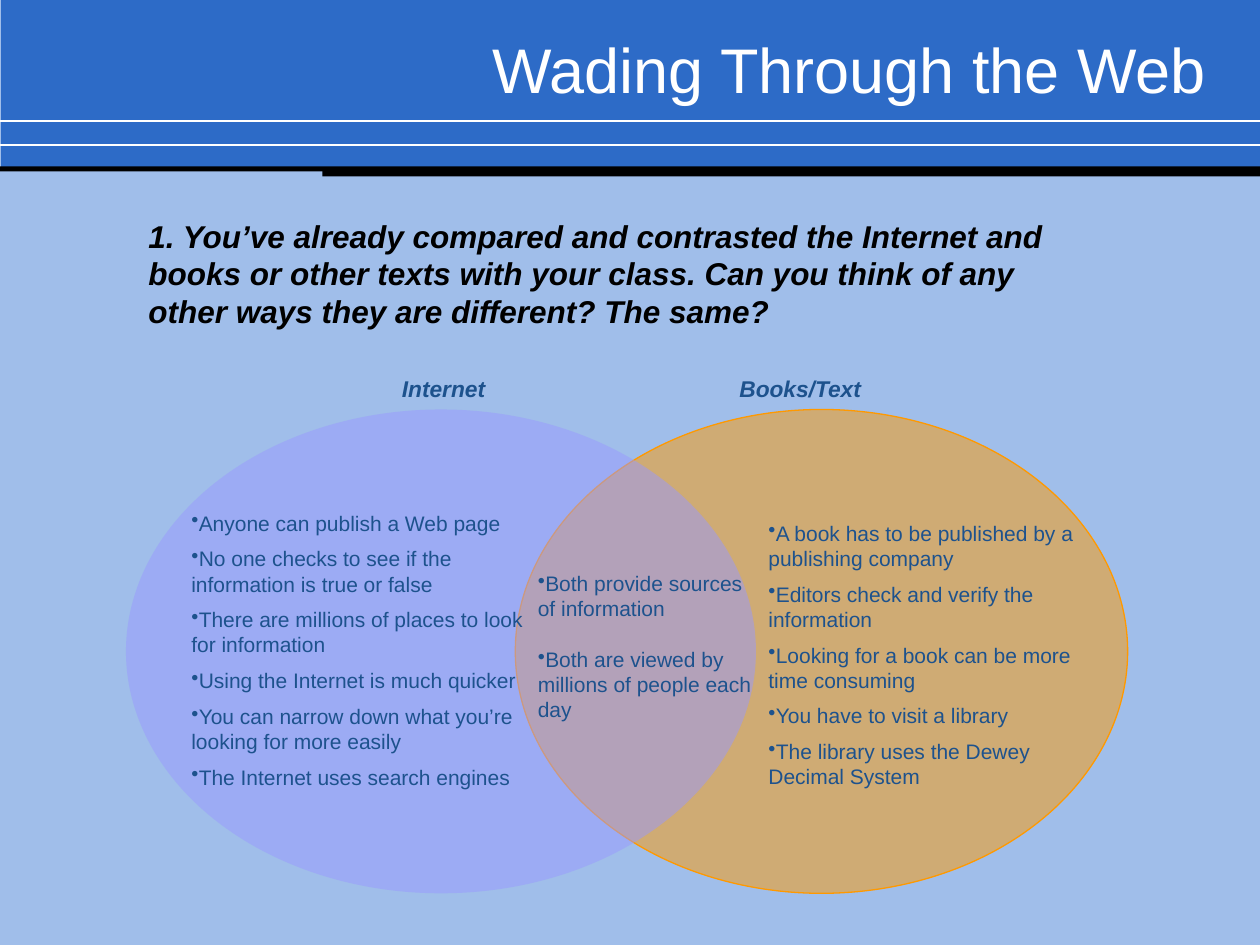
from lxml.etree import SubElement
from pptx import Presentation
from pptx.dml.color import RGBColor
from pptx.enum.shapes import MSO_CONNECTOR as Connector, MSO_SHAPE as Shape
from pptx.enum.text import MSO_ANCHOR as Anchor, PP_ALIGN as Align
from pptx.oxml.ns import qn
from pptx.util import Inches, Pt

COLORS = {
    "sky": "A0BEEA", "banner": "2D6BC7", "white": "FFFFFF", "black": "000000",
    "orange": "FF9900", "violet": "9999FF", "navy": "1D528D",
}
TITLE = "Wading Through the Web"
QUESTION = (
    "1. You’ve already compared and contrasted the Internet and books or other "
    "texts with your class. Can you think of any other ways they are different? The same?"
)
BARS = [
    ("banner", (0.01, 0, 9.99, 1.33)),
    ("black", (0, 1.32, 10, 0.04)),
    ("black", (2.56, 1.33, 7.44, 0.07)),
]
RULES = [0.96, 1.15, 1.33]
CIRCLES = [
    ("Books/Text", (5.6, 2.89, 1.5, 0.39), "orange", (4.09, 3.25, 4.86, 3.84), True),
    ("Internet", (2.9, 2.89, 1.24, 0.39), "violet", (1, 3.25, 5, 3.84), False),
]
FACTS = [
    ((1.42, 4, 2.92, 2.4), 6, [
        "Anyone can publish a Web page",
        "No one checks to see if the information is true or false",
        "There are millions of places to look for information",
        "Using the Internet is much quicker",
        "You can narrow down what you’re looking for more easily",
        "The Internet uses search engines",
    ]),
    ((4.17, 4.48, 1.92, 1.3), 14.5, [
        "Both provide sources of information",
        "Both are viewed by millions of people each day",
    ]),
    ((6, 4.08, 2.79, 2.3), 6, [
        "A book has to be published by a publishing company",
        "Editors check and verify the information",
        "Looking for a book can be more time consuming",
        "You have to visit a library",
        "The library uses the Dewey Decimal System",
    ]),
]
TITLE_FONT = {"size": Pt(36)}
QUESTION_FONT = {"size": Pt(18), "bold": True, "italic": True}
LABEL_FONT = {"size": Pt(13), "bold": True, "italic": True}
FACT_FONT = {"size": Pt(12)}


def rgb(name):
    return RGBColor.from_string(COLORS[name])


def add_figure(slide, kind, place, color):
    figure = slide.shapes.add_shape(kind, *map(Inches, place))
    figure.shadow.inherit = False
    figure.fill.solid()
    figure.fill.fore_color.rgb = rgb(color)
    figure.line.fill.background()
    return figure


def add_rule(slide, y):
    rule = slide.shapes.add_connector(
        Connector.STRAIGHT, Inches(0), Inches(y), Inches(10), Inches(y))
    rule.line.color.rgb = rgb("white")
    rule.line.width = Pt(1)
    SubElement(rule._element.spPr, qn("a:effectLst"))


def add_circle(slide, place, color, outlined):
    circle = add_figure(slide, Shape.OVAL, place, color)
    tint = circle.fill._xPr.find(qn("a:solidFill"))[0]
    SubElement(tint, qn("a:alpha"), val="50000")
    if outlined:
        circle.line.color.rgb = rgb(color)
        circle.line.width = Pt(0.75)


def add_bullet(paragraph):
    props = paragraph._p.get_or_add_pPr()
    props.set("marL", "0")
    props.set("indent", str(-Inches(0.08)))
    tint = SubElement(props, qn("a:buClr"))
    SubElement(tint, qn("a:srgbClr"), val=COLORS["navy"])
    SubElement(props, qn("a:buChar"), char="•")


def add_text(slide, place, lines, font, color, align=Align.LEFT,
             anchor=Anchor.TOP, gap=0, bulleted=False, padded=True):
    frame = slide.shapes.add_textbox(*map(Inches, place)).text_frame
    frame.word_wrap = True
    frame.vertical_anchor = anchor
    if not padded:
        for side in ("left", "top", "right", "bottom"):
            setattr(frame, f"margin_{side}", 0)
    for index, line in enumerate(lines):
        paragraph = frame.paragraphs[0] if index == 0 else frame.add_paragraph()
        paragraph.alignment = align
        if index and gap:
            paragraph.space_before = Pt(gap)
        if bulleted:
            add_bullet(paragraph)
        run = paragraph.add_run()
        run.text = line
        for key, value in {"name": "Arial", **font}.items():
            setattr(run.font, key, value)
        run.font.color.rgb = rgb(color)


def main():
    deck = Presentation()
    deck.slide_width, deck.slide_height = Inches(10), Inches(7.5)
    slide = deck.slides.add_slide(deck.slide_layouts[6])
    slide.background.fill.solid()
    slide.background.fill.fore_color.rgb = rgb("sky")

    banner, *edges = BARS
    add_figure(slide, Shape.RECTANGLE, banner[1], banner[0])
    for y in RULES:
        add_rule(slide, y)
    for color, place in edges:
        add_figure(slide, Shape.RECTANGLE, place, color)
    add_text(slide, (2.75, 0.25, 6.92, 0.58), [TITLE], TITLE_FONT, "white",
             Align.RIGHT, Anchor.MIDDLE)

    for label, label_place, color, place, outlined in CIRCLES:
        add_circle(slide, place, color, outlined)
        add_text(slide, label_place, [label], LABEL_FONT, "navy",
                 Align.CENTER, Anchor.MIDDLE, padded=False)
    for place, gap, facts in FACTS:
        add_text(slide, place, facts, FACT_FONT, "navy", gap=gap, bulleted=True)
    add_text(slide, (1.08, 1.67, 7.42, 1), [QUESTION], QUESTION_FONT, "black")

    deck.save("out.pptx")


if __name__ == "__main__":
    main()
